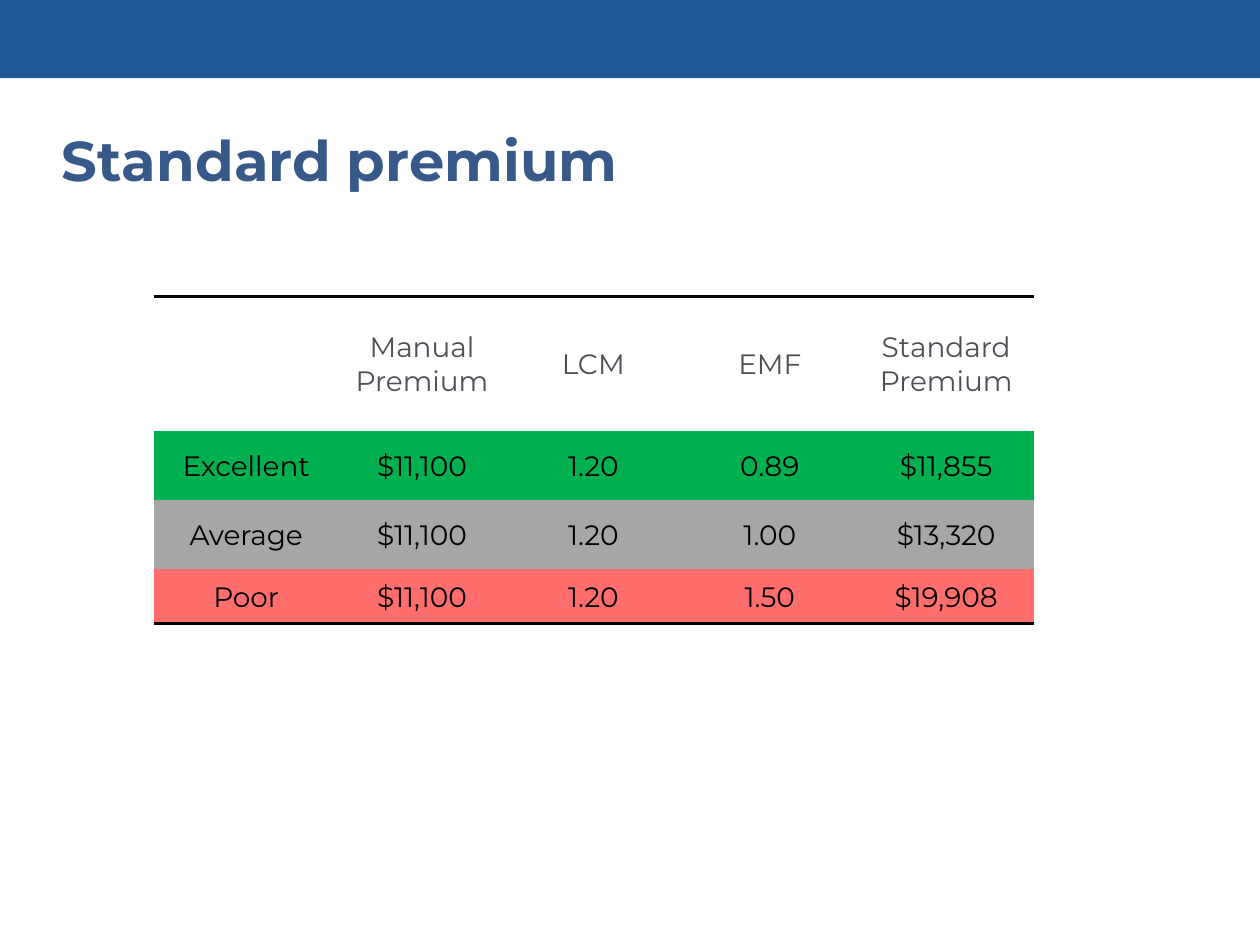
"""Build the standard premium slide: a title and a premium table by risk rating."""
from lxml.etree import SubElement
from pptx import Presentation
from pptx.dml.color import RGBColor
from pptx.enum.shapes import MSO_SHAPE as Shape
from pptx.enum.text import MSO_ANCHOR as Anchor, PP_ALIGN as Align
from pptx.oxml import parse_xml
from pptx.oxml.ns import nsdecls, qn
from pptx.util import Inches, Pt

BAND_BLUE = RGBColor(0x00, 0x3F, 0x87)
TITLE_BLUE = RGBColor(0x36, 0x59, 0x89)
SLATE = RGBColor(0x4D, 0x4E, 0x56)
BLACK = RGBColor(0x00, 0x00, 0x00)
WHITE = RGBColor(0xFF, 0xFF, 0xFF)
GREEN = RGBColor(0x00, 0xB0, 0x50)
GRAY = RGBColor(0xA6, 0xA6, 0xA6)
RED = RGBColor(0xFF, 0x6D, 0x6D)

FONT = "Montserrat"
PLAIN_STYLE = "{2D5ABB26-0587-4C30-8999-92F81FD0307C}"
TITLE = "Standard premium"
ROWS = [
    (1.07, WHITE, SLATE, ["", "Manual Premium", "LCM", "EMF", "Standard Premium"]),
    (0.55, GREEN, BLACK, ["Excellent", "$11,100", "1.20", "0.89", "$11,855"]),
    (0.55, GRAY, BLACK, ["Average", "$11,100", "1.20", "1.00", "$13,320"]),
    (0.43, RED, BLACK, ["Poor", "$11,100", "1.20", "1.50", "$19,908"]),
]
COLUMN_WIDTHS = [1.47, 1.32, 1.4, 1.4, 1.4]
CELL_FORMAT = {
    "vertical_anchor": Anchor.MIDDLE,
    "margin_left": Inches(0.01),
    "margin_right": Inches(0.01),
    "margin_top": Inches(0.01),
    "margin_bottom": 0,
}


def set_values(target, values):
    for name, value in values.items():
        setattr(target, name, value)


def format_font(font, size, color, bold=False):
    set_values(font, {"name": FONT, "size": Pt(size), "bold": bold})
    font.color.rgb = color


def add_border(cell, side):
    line = parse_xml(
        f'<a:{side} {nsdecls("a")} w="{Pt(2)}"><a:solidFill>'
        f'<a:srgbClr val="{BLACK}"/></a:solidFill></a:{side}>'
    )
    cell._tc.get_or_add_tcPr().insert(0, line)


def add_band(slide, width):
    band = slide.shapes.add_shape(Shape.RECTANGLE, 0, 0, width, Inches(0.62))
    band.shadow.inherit = False
    band.line.fill.background()
    band.fill.solid()
    band.fill.fore_color.rgb = BAND_BLUE
    color = band._element.spPr.find(qn("a:solidFill")).find(qn("a:srgbClr"))
    SubElement(color, qn("a:alpha"), val="87000")


def format_title(title):
    box = {"left": 0.39, "top": 0.87, "width": 9.21, "height": 0.85}
    set_values(title, {name: Inches(value) for name, value in box.items()})
    title.text_frame.text = TITLE
    title.text_frame.vertical_anchor = Anchor.MIDDLE
    paragraph = title.text_frame.paragraphs[0]
    set_values(paragraph, {"alignment": Align.LEFT, "line_spacing": 0.9})
    format_font(paragraph.runs[0].font, 32, TITLE_BLUE, bold=True)


def add_premium_table(slide):
    width, height = sum(COLUMN_WIDTHS), sum(row[0] for row in ROWS)
    table = slide.shapes.add_table(
        len(ROWS), len(COLUMN_WIDTHS),
        Inches(1.22), Inches(2.35), Inches(width), Inches(height),
    ).table
    set_values(table, {"first_row": False, "horz_banding": False})
    table._tbl.tblPr.find(qn("a:tableStyleId")).text = PLAIN_STYLE
    for column, column_width in zip(table.columns, COLUMN_WIDTHS):
        column.width = Inches(column_width)
    for index, (row_height, fill, color, texts) in enumerate(ROWS):
        row = table.rows[index]
        row.height = Inches(row_height)
        for cell, text in zip(row.cells, texts):
            set_values(cell, CELL_FORMAT)
            cell.fill.solid()
            cell.fill.fore_color.rgb = fill
            cell.text = text
            paragraph = cell.text_frame.paragraphs[0]
            paragraph.alignment = Align.CENTER
            for run in paragraph.runs:
                format_font(run.font, 16, color)
            if index == 0:
                add_border(cell, "lnT")
            if index == len(ROWS) - 1:
                add_border(cell, "lnB")


def main():
    presentation = Presentation()
    set_values(presentation, {"slide_width": Inches(10), "slide_height": Inches(7.5)})
    slide = presentation.slides.add_slide(presentation.slide_layouts[5])
    add_band(slide, presentation.slide_width)
    format_title(slide.shapes.title)
    add_premium_table(slide)
    presentation.save("out.pptx")


if __name__ == "__main__":
    main()
